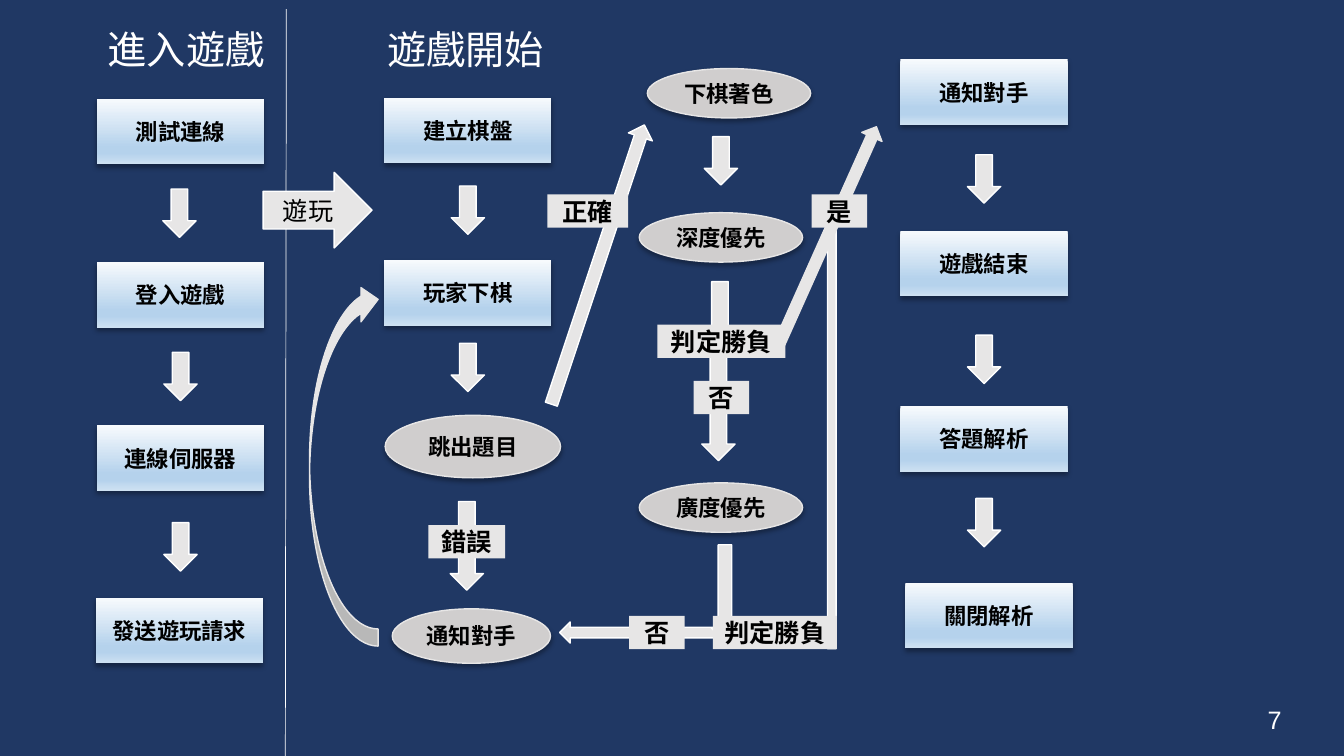
from dataclasses import dataclass
from typing import Any

from lxml.etree import SubElement as Sub
from pptx import Presentation as Deck
from pptx.dml.color import RGBColor as Color
from pptx.enum.shapes import MSO_CONNECTOR as Link, MSO_SHAPE as Kind
from pptx.enum.text import MSO_ANCHOR as Anchor, PP_ALIGN as Align
from pptx.oxml import parse_xml
from pptx.oxml.ns import nsdecls, qn
from pptx.util import Pt

SCALE = 9144
FONT = "Arial"
HUES = {
    "navy": "203864", "white": "FFFFFF", "black": "000000",
    "pale": "E7E6E6", "gray": "D0CECE",
    "ice": "F7FAFD", "sky": "B5D2EC", "mist": "CEE1F2",
}
STOPS = ((0, "ice"), (74, "sky"), (83, "sky"), (100, "mist"))


@dataclass(frozen=True)
class Node:
    x: int
    y: int
    w: int
    h: int
    text: str = ""


@dataclass(frozen=True)
class Arrow:
    x: int
    y: int
    w: int = 48
    h: int = 33
    turn: float = 90
    edge: str = "white"


@dataclass(frozen=True)
class Style:
    size: int
    bold: bool = False
    hue: str = "black"
    align: Any = Align.CENTER
    anchor: Any = Anchor.MIDDLE
    inset: int = 0


BOX = Style(16, bold=True)
LABEL = Style(18, bold=True)
PLAY = Style(18)
TITLE = Style(28, hue="white", align=Align.LEFT, anchor=Anchor.TOP, inset=10)
PAGE = Style(18, hue="white", align=Align.RIGHT, inset=10)

TITLES = (Node(97, 25, 225, 92, "進入遊戲"), Node(374, 25, 225, 92, "遊戲開始"))
BOXES = [Node(x, y, 166, 65, text) for x, y, text in (
    (96, 98, "測試連線"), (96, 260, "登入遊戲"),
    (96, 422, "連線伺服器"), (95, 593, "發送遊玩請求"),
    (381, 97, "建立棋盤"), (381, 258, "玩家下棋"),
    (893, 59, "通知對手"), (893, 229, "遊戲結束"),
    (893, 403, "答題解析"), (898, 578, "關閉解析"),
)]
OVALS = (
    Node(382, 412, 174, 62, "跳出題目"), Node(389, 604, 157, 54, "通知對手"),
    Node(642, 68, 162, 49, "下棋著色"), Node(634, 211, 162, 49, "深度優先"),
    Node(634, 479, 162, 49, "廣度優先"),
)
ARROWS = (
    Arrow(154, 195), Arrow(155, 357), Arrow(155, 526),
    Arrow(440, 192), Arrow(440, 348), Arrow(691, 143),
    Arrow(952, 161), Arrow(952, 340), Arrow(952, 502),
    Arrow(555, 617, 159, 21, 180), Arrow(604, 414, 442, 17, 270),
    Arrow(660, 388, 105), Arrow(447, 250, 292, 25, 288.4),
    Arrow(419, 525, 88), Arrow(679, 298, 70),
    Arrow(696, 227, 246, 22, 294.1, "pale"), Arrow(671, 575, 96, 27),
)
LABELS = [Node(x, y, w, 33, text) for x, y, w, text in (
    (425, 521, 76, "錯誤"), (543, 193, 80, "正確"),
    (652, 322, 127, "判定勝負"), (805, 193, 55, "是"),
    (688, 378, 55, "否"), (707, 611, 123, "判定勝負"),
    (624, 611, 55, "否"),
)]
LOOP = Node(307, 280, 68, 361)
ENTRY = Node(261, 171, 108, 75, "遊玩")
NUMBER = Node(981, 694, 300, 40, "7")


def px(*sizes: int) -> list[int]:
    return [size * SCALE for size in sizes]


def tint(name: str) -> Color:
    return Color.from_string(HUES[name])


def assign(target: Any, values: dict[str, Any]) -> None:
    for name, value in values.items():
        setattr(target, name, value)


def write(shape: Any, text: str, style: Style) -> Any:
    frame = shape.text_frame
    inset = style.inset * SCALE
    assign(frame, {
        "word_wrap": True, "vertical_anchor": style.anchor,
        "margin_left": inset, "margin_right": inset,
        "margin_top": inset // 2, "margin_bottom": inset // 2,
    })
    para = frame.paragraphs[0]
    para.alignment = style.align
    run = para.add_run()
    run.text = text
    assign(run.font, {"name": FONT, "size": Pt(style.size), "bold": style.bold})
    run.font.color.rgb = tint(style.hue)
    return para


def add_text(slide: Any, node: Node, style: Style) -> Any:
    box = slide.shapes.add_textbox(*px(node.x, node.y, node.w, node.h))
    return write(box, node.text, style)


def add_flat(slide: Any, kind: Any, node: Node | Arrow, fill: str = "pale",
             edge: str = "") -> Any:
    shape = slide.shapes.add_shape(kind, *px(node.x, node.y, node.w, node.h))
    shape.shadow.inherit = False
    shape.fill.solid()
    shape.fill.fore_color.rgb = tint(fill)
    if edge:
        shape.line.color.rgb = tint(edge)
        shape.line.width = Pt(1)
    else:
        shape.line.fill.background()
    return shape


def add_shade(shape: Any) -> None:
    glow = shape._element.spPr.find(qn("a:effectLst"))
    glow.append(parse_xml(
        f'<a:outerShdw {nsdecls("a")} blurRad="{Pt(3.5)}" dist="{Pt(2.2)}" '
        f'dir="5400000" algn="t" rotWithShape="0"><a:srgbClr val="{HUES["black"]}">'
        '<a:alpha val="32000"/></a:srgbClr></a:outerShdw>'))


def add_blend(shape: Any) -> None:
    stops = "".join(
        f'<a:gs pos="{at * 1000}"><a:srgbClr val="{HUES[name]}"/></a:gs>'
        for at, name in STOPS)
    props = shape._element.spPr
    props.replace(props.find(qn("a:solidFill")), parse_xml(
        f'<a:gradFill {nsdecls("a")} rotWithShape="1"><a:gsLst>{stops}</a:gsLst>'
        '<a:lin ang="5400000" scaled="0"/></a:gradFill>'))


def add_rule(slide: Any) -> None:
    rule = slide.shapes.add_connector(Link.STRAIGHT, *px(284, 9, 283, 750))
    rule.line.color.rgb = tint("white")
    rule.line.width = Pt(0.5)
    Sub(rule._element.spPr, qn("a:effectLst"))


def main() -> None:
    deck = Deck()
    assign(deck, {"slide_width": 1333 * SCALE, "slide_height": 750 * SCALE})
    slide = deck.slides.add_slide(deck.slide_layouts[6])
    slide.background.fill.solid()
    slide.background.fill.fore_color.rgb = tint("navy")

    add_text(slide, NUMBER, PAGE)
    for node in TITLES:
        para = add_text(slide, node, TITLE)
        assign(para, {"line_spacing": 0.9, "space_before": Pt(10)})
    for node in BOXES:
        shape = add_flat(slide, Kind.RECTANGLE, node)
        add_blend(shape)
        add_shade(shape)
        write(shape, node.text, BOX)
    add_rule(slide)
    entry = add_flat(slide, Kind.RIGHT_ARROW, ENTRY, edge="white")
    write(entry, ENTRY.text, PLAY)
    for node in OVALS:
        shape = add_flat(slide, Kind.OVAL, node, "gray", "pale")
        add_shade(shape)
        write(shape, node.text, BOX)
    for arrow in ARROWS:
        shape = add_flat(slide, Kind.RIGHT_ARROW, arrow, edge=arrow.edge)
        shape.rotation = arrow.turn
    loop = add_flat(slide, Kind.CURVED_RIGHT_ARROW, LOOP, edge="pale")
    loop._element.spPr.find(qn("a:xfrm")).set("flipV", "1")
    for node in LABELS:
        write(add_flat(slide, Kind.RECTANGLE, node), node.text, LABEL)

    deck.save("out.pptx")


if __name__ == "__main__":
    main()
